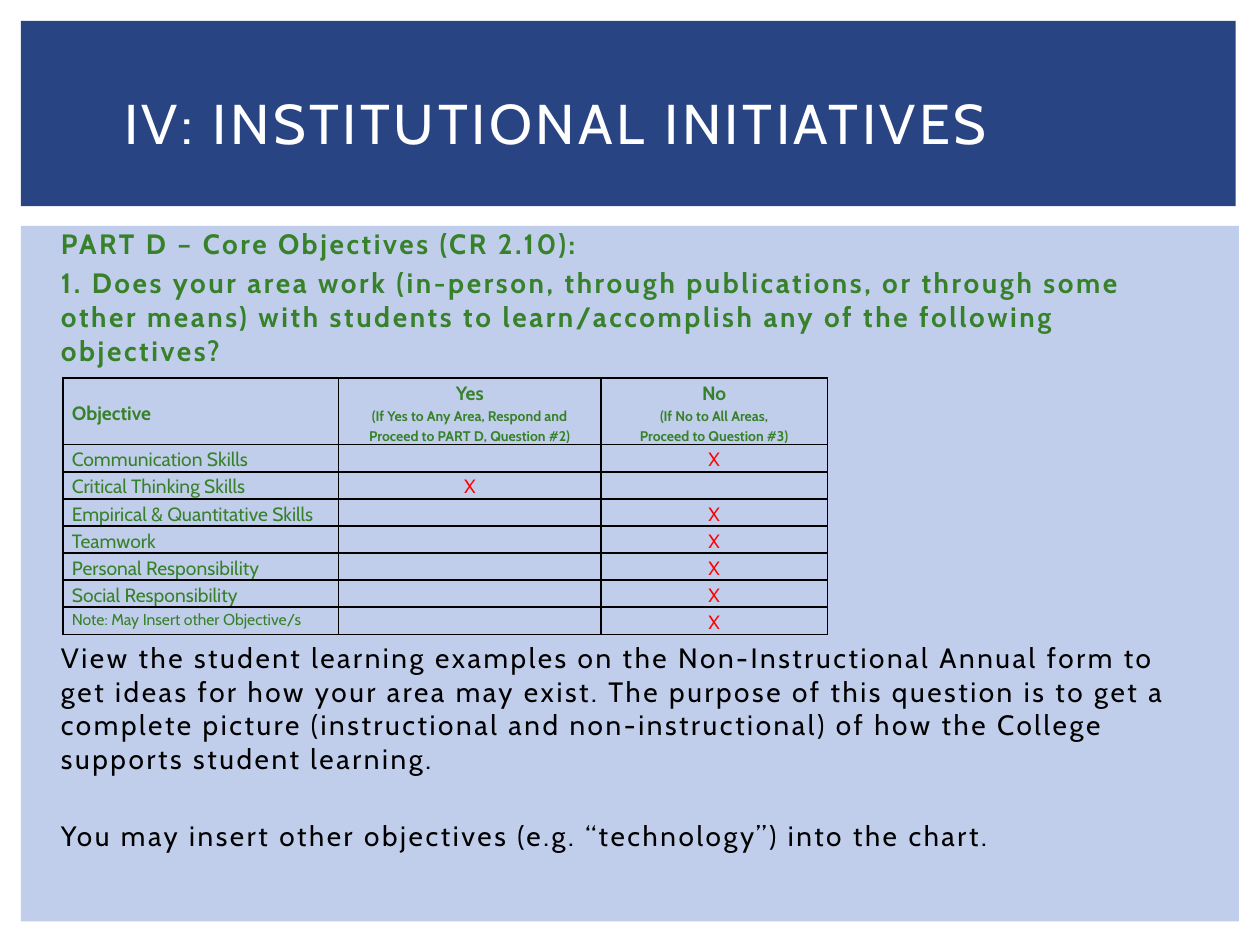
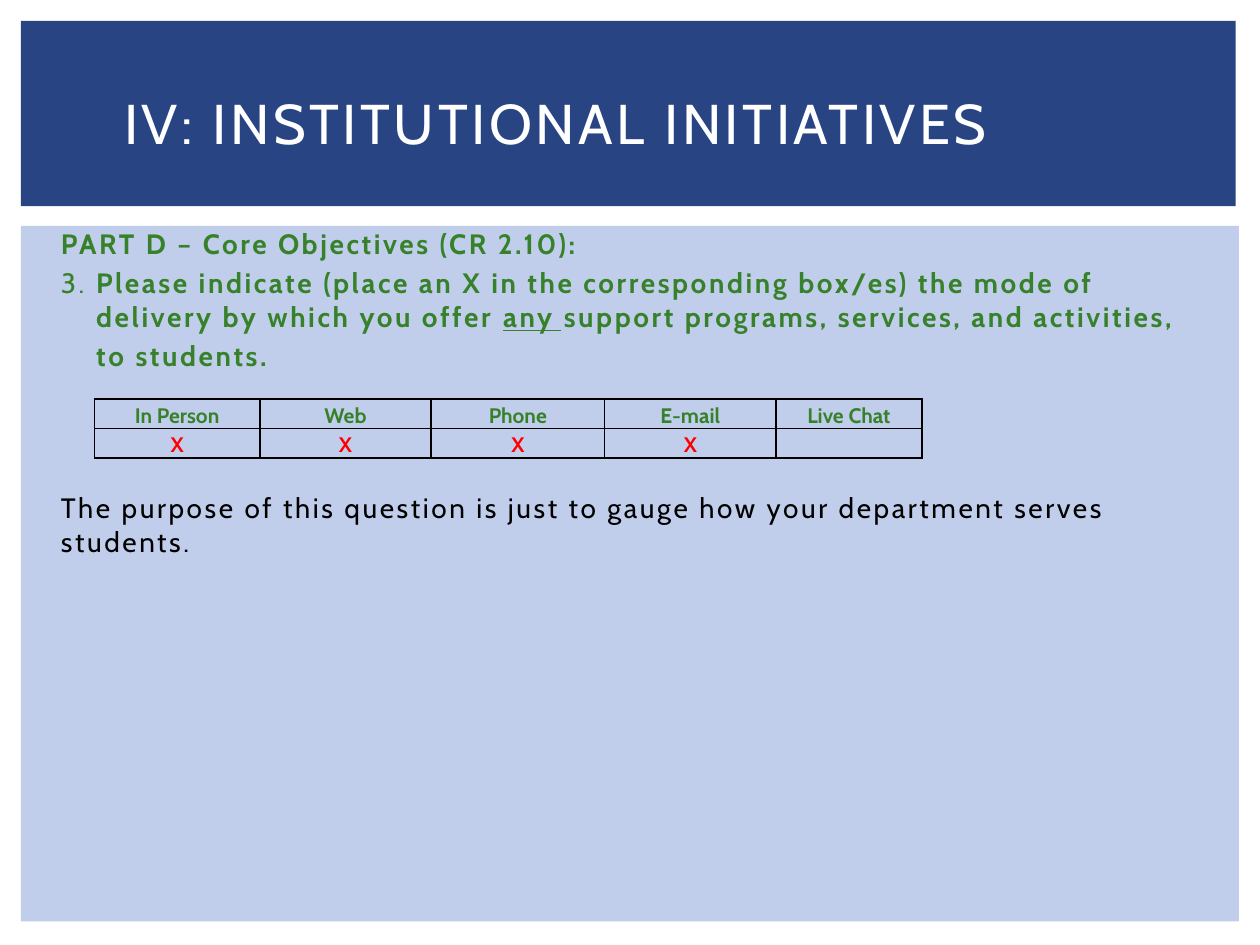
from dataclasses import dataclass
from lxml.etree import SubElement, fromstring
from pptx import Presentation
from pptx.dml.color import RGBColor as RGB
from pptx.enum.shapes import MSO_SHAPE as Shape
from pptx.enum.text import MSO_ANCHOR as Anchor, MSO_AUTO_SIZE as Fit, PP_ALIGN as Align
from pptx.oxml.ns import nsdecls, qn
from pptx.util import Inches, Pt


@dataclass
class Theme:
    face: str = "Cabin"
    navy: str = "284483"
    pale: str = "C1CEEB"
    green: str = "37812B"
    red: str = "FF0000"
    black: str = "000000"
    white: str = "FFFFFF"
    title: int = 32
    body: int = 16
    mode: int = 12
    cell: int = 11
    note: int = 9
    hint: int = 8


theme = Theme()
deck = Presentation()
deck.slide_width, deck.slide_height = Inches(10), Inches(7.5)

# Grid of 120 columns by 90 rows
col, row = deck.slide_width // 120, deck.slide_height // 90


def grid(x, y, wide, high):
    return int(x * col), int(y * row), int(wide * col), int(high * row)


def dress(font, size, color, bold=False):
    font.name, font.size, font.bold = theme.face, Pt(size), bold
    font.color.rgb = RGB.from_string(color)


# Content: paragraphs are (runs, space before, left, indent, colour, bold)
heading = "IV: INSTITUTIONAL INITIATIVES"
part = (["PART D – Core Objectives (CR 2.10):"], 0, 0.05, 0, theme.green, True)
pages = [
    dict(
        text=[
            part,
            (["1. Does your area work (in-person, through publications, or through some "
              "other means) with students to learn/accomplish any of the following "
              "objectives?"], 3.2, 0.05, 0, theme.green, True),
            (["View the student learning examples on the Non-Instructional Annual form to "
              "get ideas for how your area may exist. The purpose of this question is to "
              "get a complete picture (instructional and non-instructional) of how the "
              "College supports student learning."], 156.5, 0.05, 0, theme.black, False),
            (["You may insert other objectives (e.g. “technology”) into the chart."],
             25, 0.05, 0, theme.black, False),
        ],
        spot=(6, 36), cols=[26.25, 25, 21.55], rows=[6.3] + [2.58] * 7, size=theme.cell,
        cells=[
            ["Objective",
             "Yes\v(If Yes to Any Area, Respond and\vProceed to PART D, Question #2)",
             "No\v(If No to All Areas,\vProceed to Question #3)"],
            ["Communication Skills", "", "X"],
            ["Critical Thinking Skills", "X", ""],
            ["Empirical & Quantitative Skills", "", "X"],
            ["Teamwork", "", "X"],
            ["Personal Responsibility", "", "X"],
            ["Social Responsibility", "", "X"],
            ["Note: May Insert other Objective/s", "", "X"],
        ],
    ),
    dict(
        text=[
            part,
            (["3. ", "Please indicate (place an X in the corresponding box/es) the mode of "
              "delivery by which you offer ", "any ",
              "support programs, services, and activities,"],
             3.2, 0.33, -0.28, theme.green, True),
            (["to students."], 3.2, 0.33, 0, theme.green, True),
            (["The purpose of this question is just to gauge how your department serves "
              "students."], 67.5, 0.05, 0, theme.black, False),
        ],
        spot=(9, 38), cols=[15.75, 16.3, 16.55, 16.3, 13.9], rows=[2.8] * 2,
        size=theme.mode,
        cells=[["In Person", "Web", "Phone", "E-mail", "Live Chat"],
               ["X", "X", "X", "X", ""]],
    ),
]

layout = deck.slide_layouts[1]
slides = [deck.slides.add_slide(layout) for page in pages]

# Bands shared through the layout, behind its placeholders
bands = [((2, 21.5, 116, 66.25), theme.pale), ((2, 2, 115.7, 17.65), theme.navy)]
for place, (box, color) in enumerate(bands, 2):
    band = slides[0].shapes.add_shape(Shape.RECTANGLE, *grid(*box))
    band.shadow.inherit = False
    band.fill.solid()
    band.fill.fore_color.rgb = RGB.from_string(color)
    band.line.fill.background()
    layout.shapes.element.insert(place, band.element)

for slide, page in zip(slides, pages):
    # Title
    title, body = slide.placeholders
    title.left, title.top, title.width, title.height = grid(5, 4.7, 110, 13.8)
    frame = title.text_frame
    frame.text, frame.auto_size = heading, Fit.NONE
    frame.vertical_anchor, frame.margin_right = Anchor.MIDDLE, Inches(1.27)
    frame.paragraphs[0].alignment = Align.CENTER
    dress(frame.paragraphs[0].font, theme.title, theme.white)
    for mark in title.element.iter(qn("a:defRPr")):
        mark.set("spc", "200")

    # Body text
    body.left, body.top, body.width, body.height = grid(4, 21, 110.3, 66)
    frame = body.text_frame
    frame.auto_size, frame.vertical_anchor = Fit.NONE, Anchor.TOP
    for n, (runs, gap, left, indent, color, bold) in enumerate(page["text"]):
        para = frame.add_paragraph() if n else frame.paragraphs[0]
        para.space_before = Pt(gap)
        dress(para.font, theme.body, color, bold)
        for words in runs:
            run = para.add_run()
            run.text = words
            if words == "3. ":
                run.font.bold = False
            if words == "any ":
                run.font.underline = True
    for mark, item in zip(body.element.iter(qn("a:defRPr")), page["text"]):
        mark.set("spc", "150")
        mark.addprevious(fromstring(f"<a:buNone {nsdecls('a')}/>"))
        mark.getparent().set("marL", str(Inches(item[2])))
        mark.getparent().set("indent", str(Inches(item[3])))

    # Table
    cells, size = page["cells"], page["size"]
    box = grid(*page["spot"], sum(page["cols"]), sum(page["rows"]))
    chart = slide.shapes.add_table(len(cells), len(cells[0]), *box)
    table = chart.table
    table.first_row = table.horz_banding = False
    for line, wide in zip(table.columns, page["cols"]):
        line.width = int(wide * col)
    for line, high in zip(table.rows, page["rows"]):
        line.height = int(high * row)
    for r, line in enumerate(cells):
        for c, words in enumerate(line):
            cell = table.cell(r, c)
            cell.fill.background()
            cell.margin_left = cell.margin_right = Inches(0.07)
            cell.margin_top = cell.margin_bottom = 0
            para = cell.text_frame.paragraphs[0]
            para.text, para.line_spacing = words, 1.15
            color = theme.red if words == "X" else theme.green
            bold = r == 0 or size == theme.mode
            dress(para.font, size, color, bold)
            if words != "Objective" and (c or bold):
                para.alignment = Align.CENTER
            if words == "Objective":
                cell.vertical_anchor = Anchor.MIDDLE
            if words.startswith("Note"):
                para.font.size = Pt(theme.note)
            if "\v" in words:
                para.font.size = Pt(theme.hint)
                para.runs[0].font.size = Pt(size)

    # Cell borders, and the type size of empty cells
    for cell in chart.element.iter(qn("a:tcPr")):
        for n, side in enumerate(["lnL", "lnR", "lnT", "lnB"]):
            cell.insert(n, fromstring(
                f'<a:{side} {nsdecls("a")} w="12700"><a:solidFill>'
                f'<a:srgbClr val="{theme.black}"/></a:solidFill></a:{side}>'))
    for para in chart.element.iter(qn("a:p")):
        if para.find(qn("a:r")) is None:
            SubElement(para, qn("a:endParaRPr"), sz=str(size * 100))

deck.save("out.pptx")
